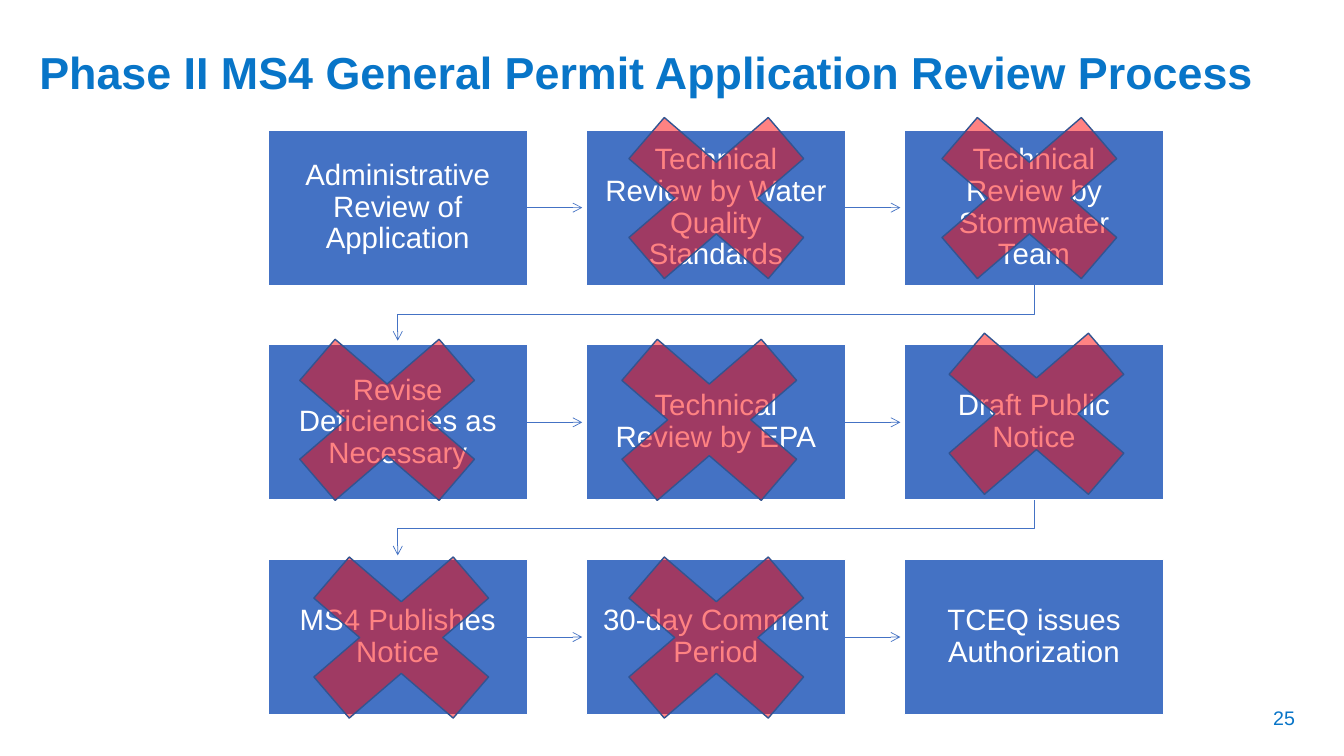
from dataclasses import dataclass
from typing import Optional

import lxml.etree
import pptx
import pptx.dml.color
import pptx.enum.shapes
import pptx.enum.text
import pptx.oxml.ns
import pptx.util

COLORS = {"heading": "0875C8", "box": "4472C4", "white": "FFFFFF",
          "cross": "FF0000", "cross_edge": "325491"}
FONT = "Arial"
SLIDE_WIDTH, SLIDE_HEIGHT = 13.33, 7.5

# Grid of process steps, in inches
GRID_LEFT, GRID_TOP = 2.66, 1.29
COLUMN_PITCH, ROW_PITCH = 6.31 / 2, 2.13
BOX_WIDTH, BOX_HEIGHT = 2.57, 1.54
ARROW_GAP = 0.04
BOX_INSET = 0.16
CROSS_WIDTH, CROSS_HEIGHT = 2.66, 2.29
COLUMNS = 3


@dataclass
class Step:
    label: str
    cross: Optional[tuple[float, float]] = None  # offset from the box corner


STEPS = [
    Step("Administrative Review of Application"),
    Step("Technical Review by Water Quality Standards", (-0.04, -0.47)),
    Step("Technical Review by Stormwater Team", (-0.09, -0.47)),
    Step("Revise Deficiencies as Necessary", (-0.15, -0.40)),
    Step("Technical Review by EPA", (-0.11, -0.40)),
    Step("Draft Public Notice", (-0.02, -0.46)),
    Step("MS4 Publishes Notice", (-0.01, -0.37)),
    Step("30-day Comment Period", (-0.04, -0.37)),
    Step("TCEQ issues Authorization"),
]


def inches(*lengths: float) -> list[int]:
    return [pptx.util.Inches(length) for length in lengths]


def rgb(name: str) -> pptx.dml.color.RGBColor:
    return pptx.dml.color.RGBColor.from_string(COLORS[name])


def corner(index: int) -> tuple[float, float]:
    row, column = divmod(index, COLUMNS)
    return GRID_LEFT + column * COLUMN_PITCH, GRID_TOP + row * ROW_PITCH


def write(frame, text: str, size: float, color: str, align, bold: bool = False) -> None:
    frame.word_wrap = True
    frame.auto_size = pptx.enum.text.MSO_AUTO_SIZE.NONE
    paragraph = frame.paragraphs[0]
    paragraph.text = text
    paragraph.alignment = align
    font = paragraph.font
    font.name, font.size, font.bold = FONT, pptx.util.Pt(size), bold
    font.color.rgb = rgb(color)


def style_arrow(arrow) -> None:
    arrow.line.color.rgb = rgb("box")
    arrow.line.width = pptx.util.Pt(0.5)
    line = arrow.line._get_or_add_ln()
    lxml.etree.SubElement(line, pptx.oxml.ns.qn("a:tailEnd"), type="arrow")


def add_box(shapes, index: int, step: Step):
    box = shapes.add_shape(pptx.enum.shapes.MSO_SHAPE.RECTANGLE,
                           *inches(*corner(index), BOX_WIDTH, BOX_HEIGHT))
    box.shadow.inherit = False
    box.fill.solid()
    box.fill.fore_color.rgb = rgb("box")
    box.line.color.rgb = rgb("white")
    box.line.width = pptx.util.Pt(1)
    frame = box.text_frame
    frame.margin_left = frame.margin_right = pptx.util.Inches(BOX_INSET)
    frame.margin_top = frame.margin_bottom = pptx.util.Inches(BOX_INSET)
    frame.vertical_anchor = pptx.enum.text.MSO_ANCHOR.MIDDLE
    write(frame, step.label, 21, "white", pptx.enum.text.PP_ALIGN.CENTER)
    frame.paragraphs[0].line_spacing = 0.9
    return box


def add_row_arrow(shapes, index: int, box) -> None:
    """Straight arrow to the next step in the same row."""
    left, top = corner(index)
    middle = top + BOX_HEIGHT / 2
    arrow = shapes.add_connector(
        pptx.enum.shapes.MSO_CONNECTOR.STRAIGHT,
        *inches(left + BOX_WIDTH, middle, left + COLUMN_PITCH - ARROW_GAP, middle))
    arrow.begin_connect(box, 3)
    style_arrow(arrow)
    lxml.etree.SubElement(arrow._element.spPr, pptx.oxml.ns.qn("a:effectLst"))


def add_return_arrow(shapes, index: int) -> None:
    """Bent arrow from the end of a row to the start of the next one."""
    left, top = corner(index)
    start_x, start_y = left + BOX_WIDTH / 2, top + BOX_HEIGHT
    end_x = GRID_LEFT + BOX_WIDTH / 2
    end_y = top + ROW_PITCH - ARROW_GAP
    turn_y = top + (BOX_HEIGHT + ROW_PITCH) / 2 - ARROW_GAP / 4
    builder = shapes.build_freeform(*inches(start_x, start_y))
    builder.add_line_segments(
        [inches(start_x, turn_y), inches(end_x, turn_y), inches(end_x, end_y)],
        close=False)
    arrow = builder.convert_to_shape()
    arrow.shadow.inherit = False
    arrow.fill.background()
    style_arrow(arrow)


def add_cross(shapes, index: int, offset: tuple[float, float]) -> None:
    left, top = corner(index)
    cross = shapes.add_shape(
        pptx.enum.shapes.MSO_SHAPE.MATH_MULTIPLY,
        *inches(left + offset[0], top + offset[1], CROSS_WIDTH, CROSS_HEIGHT))
    cross.shadow.inherit = False
    cross.fill.solid()
    cross.fill.fore_color.rgb = rgb("cross")
    color = cross._element.spPr.find(pptx.oxml.ns.qn("a:solidFill"))[0]
    lxml.etree.SubElement(color, pptx.oxml.ns.qn("a:alpha"), val="49000")
    cross.line.color.rgb = rgb("cross_edge")
    cross.line.width = pptx.util.Pt(1)


def main() -> None:
    deck = pptx.Presentation()
    deck.slide_width, deck.slide_height = inches(SLIDE_WIDTH, SLIDE_HEIGHT)
    slide = deck.slides.add_slide(deck.slide_layouts.get_by_name("Title Only"))
    shapes = slide.shapes

    # Title
    heading = shapes.title
    heading.left, heading.top, heading.width, heading.height = inches(0.29, 0.4, 12.43, 0.68)
    heading.text_frame.vertical_anchor = pptx.enum.text.MSO_ANCHOR.MIDDLE
    write(heading.text_frame, "Phase II MS4 General Permit Application Review Process",
          32, "heading", pptx.enum.text.PP_ALIGN.LEFT, bold=True)
    heading.text_frame.paragraphs[0].line_spacing = 0.9

    # Steps and the arrows between them
    for index, step in enumerate(STEPS):
        box = add_box(shapes, index, step)
        if (index + 1) % COLUMNS:
            add_row_arrow(shapes, index, box)
        elif index + 1 < len(STEPS):
            add_return_arrow(shapes, index)

    # Crosses over the steps that are dropped
    for index, step in enumerate(STEPS):
        if step.cross:
            add_cross(shapes, index, step.cross)

    # Page number
    page_number = shapes.add_textbox(*inches(12.29, 6.95, 0.89, 0.4))
    write(page_number.text_frame, "25", 14, "heading", pptx.enum.text.PP_ALIGN.CENTER)

    deck.save("out.pptx")


if __name__ == "__main__":
    main()
